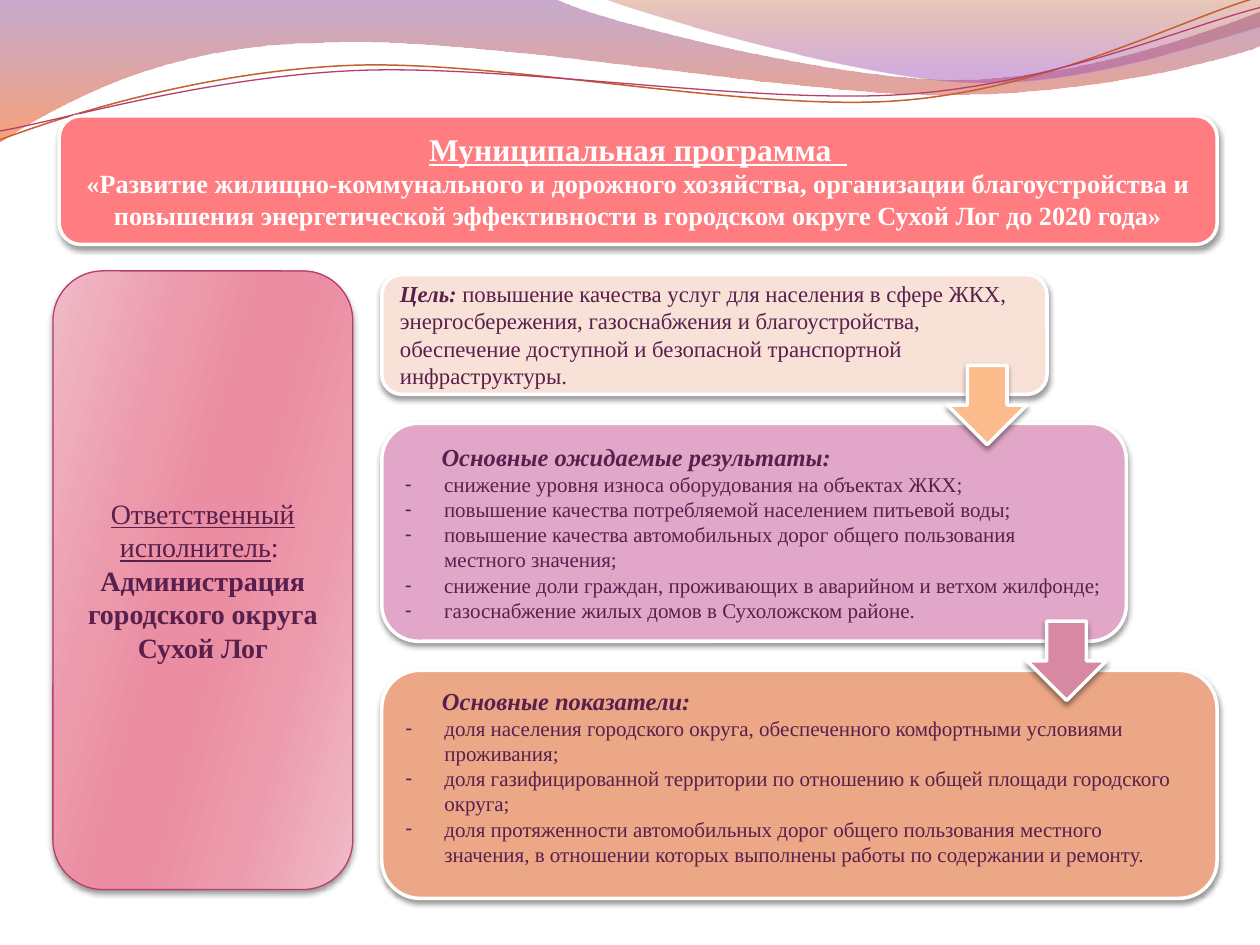
"""Build the slide on the municipal housing and roads programme."""
from lxml import etree
from pptx import Presentation
from pptx.dml.color import RGBColor
from pptx.enum.shapes import MSO_SHAPE
from pptx.enum.text import MSO_ANCHOR, MSO_AUTO_SIZE, PP_ALIGN
from pptx.oxml import parse_xml
from pptx.oxml.ns import nsdecls, qn
from pptx.util import Inches, Pt

ROUNDED, DOWN_ARROW = MSO_SHAPE.ROUNDED_RECTANGLE, MSO_SHAPE.DOWN_ARROW
LEFT, CENTER = PP_ALIGN.LEFT, PP_ALIGN.CENTER
MIDDLE, NO_AUTOFIT = MSO_ANCHOR.MIDDLE, MSO_AUTO_SIZE.NONE
FONT = "Times New Roman"
TWO_CONTENT_LAYOUT = 3
LIST_INDENT = 0.31
HEADING_INDENT = 0.29

COLORS = {
    "white": "FFFFFF", "text": "591F4D", "header": "FF7C80", "goal": "F8E2D7",
    "results": "E2A7C8", "indicators": "EBA786", "goal arrow": "FCBB8B",
    "results arrow": "D788A3", "crimson": "B83D68", "rust": "C45F30",
}
EXECUTOR_STOPS = [(0, "F0BAC6", 100), (30, "EC99AC", 100), (45, "EB8DA3", 100),
                  (55, "EB8DA3", 100), (73, "EC99AC", 100), (100, "F0BAC6", 100)]

BOXES = {
    "header": (0.47, 0.92, 9.19, 1.02),
    "executor": (0.42, 2.15, 2.38, 4.91),
    "goal": (3.03, 2.18, 5.28, 0.95),
    "results": (3.03, 3.36, 5.91, 1.73),
    "indicators": (3.03, 5.32, 6.63, 1.81),
    "goal arrow": (7.52, 2.9, 0.63, 0.63),
    "results arrow": (8.15, 4.93, 0.63, 0.63),
}

HEADER = [
    [("Муниципальная программа  ", 18, "bu")],
    [("«Развитие жилищно-коммунального и дорожного хозяйства, организации благоустройства и "
      "повышения энергетической эффективности в городском округе Сухой Лог до 2020 года»", 15, "b")],
]
EXECUTOR = [
    [("Ответственный исполнитель", 16, "u"), (": ", 16, "")],
    [("Администрация городского округа Сухой Лог", 16, "b")],
]
GOAL = [[
    ("Цель:", 13, "bi"),
    (" повышение качества услуг для населения в сфере ЖКХ, энергосбережения, газоснабжения и "
     "благоустройства, обеспечение доступной и безопасной транспортной инфраструктуры.", 13, ""),
]]
LISTS = {
    "results": ("Основные ожидаемые результаты:", [
        "снижение уровня износа оборудования на объектах ЖКХ;",
        "повышение качества потребляемой населением питьевой воды;",
        "повышение качества автомобильных дорог общего пользования местного значения;",
        "снижение доли граждан, проживающих в аварийном и ветхом жилфонде;",
        "газоснабжение жилых домов в Сухоложском районе.",
    ]),
    "indicators": ("Основные показатели:", [
        "доля населения городского округа, обеспеченного комфортными условиями проживания;",
        "доля газифицированной территории по отношению к общей площади городского округа;",
        "доля протяженности автомобильных дорог общего пользования местного значения, "
        "в отношении которых выполнены работы по содержании и ремонту.",
    ]),
}

WAVES = [
    ([(0, -0.01), (4.4, -0.01),
      [(4.76, 0.17), (6.64, 0.63), (7.58, 0.63)], [(8.53, 0.63), (9.58, 0.26), (10, 0.09)],
      (10.01, 0.36),
      [(9.83, 0.44), (8.7, 0.76), (7.46, 0.75)], [(6.22, 0.75), (3.82, 0.28), (2.57, 0.34)],
      [(1.29, 0.35), (0.46, 0.83), (-0.01, 1.13)]],
     [(0, "834591", 45), (100, "F35307", 55)]),
    ([(4.79, -0.01),
      [(5.09, 0.11), (6.82, 0.62), (7.69, 0.65)], [(8.56, 0.69), (9.61, 0.32), (10, 0.21)],
      (10, 0)],
     [(0, "B74915", 30), (80, "A14BB4", 45)]),
]
STRANDS = [
    ([(0, 1.11), [(0.48, 0.93), (1.58, 0.57), (2.77, 0.52)],
      [(3.95, 0.47), (5.93, 0.89), (7.13, 0.8)], [(8.33, 0.71), (9.38, 0.15), (9.98, -0.02)]],
     "rust", 0.85),
    ([(0, 1.04), [(0.47, 0.96), (1.64, 0.61), (2.83, 0.56)],
      [(4.03, 0.51), (5.97, 0.83), (7.17, 0.75)], [(8.36, 0.67), (9.41, 0.21), (10, 0.06)]],
     "crimson", 0.75),
]


def rgb(name):
    return RGBColor.from_string(COLORS[name])


def add_curve(slide, position, segments, close):
    start, *rest = segments
    groups = [segment if isinstance(segment, list) else [segment] for segment in rest]
    builder = slide.shapes.build_freeform(Inches(start[0]), Inches(start[1]), scale=1.0)
    builder.add_line_segments([(Inches(x), Inches(y)) for group in groups for x, y in group],
                              close=close)
    shape = builder.convert_to_shape()
    lines = iter(list(shape._element.iter(qn("a:lnTo"))))
    for group in groups:
        members = [next(lines) for _ in group]
        if len(members) == 3:
            curve = etree.Element(qn("a:cubicBezTo"))
            members[0].addprevious(curve)
            for member in members:
                curve.append(member[0])
                member.getparent().remove(member)
    shape.shadow.inherit = False
    slide.shapes._spTree.insert(2 + position, shape._element)
    return shape


def set_gradient(shape, stops, angle):
    stop_xml = "".join(
        f'<a:gs pos="{place * 1000}"><a:srgbClr val="{color}"><a:alpha val="{alpha * 1000}"/>'
        f'</a:srgbClr></a:gs>' for place, color, alpha in stops)
    shape._element.spPr.insert(2, parse_xml(
        f'<a:gradFill {nsdecls("a")} rotWithShape="1"><a:gsLst>{stop_xml}</a:gsLst>'
        f'<a:lin ang="{angle * 60000}" scaled="0"/></a:gradFill>'))


def style_panel(shape, name, line="white", width=2):
    shape.left, shape.top, shape.width, shape.height = map(Inches, BOXES[name])
    if shape.is_placeholder:
        shape._element.spPr.insert(1, parse_xml(
            f'<a:prstGeom {nsdecls("a")} prst="roundRect"><a:avLst/></a:prstGeom>'))
    if name in COLORS:
        shape.fill.solid()
        shape.fill.fore_color.rgb = rgb(name)
    else:
        set_gradient(shape, EXECUTOR_STOPS, 16)
    shape.line.color.rgb = rgb(line)
    shape.line.width = Pt(width)
    shape.shadow.inherit = False
    shape._element.spPr.find(qn("a:effectLst")).append(parse_xml(
        f'<a:outerShdw {nsdecls("a")} blurRad="38100" dist="25400" dir="5400000" rotWithShape="0">'
        '<a:srgbClr val="000000"><a:alpha val="40000"/></a:srgbClr></a:outerShdw>'))


def write(shape, paragraphs, color="text", align=CENTER):
    frame = shape.text_frame
    frame.word_wrap, frame.auto_size, frame.vertical_anchor = True, NO_AUTOFIT, MIDDLE
    for index, runs in enumerate(paragraphs):
        paragraph = frame.add_paragraph() if index else frame.paragraphs[0]
        paragraph.alignment = align
        paragraph.space_before = Pt(0)
        for text, size, style in runs:
            run = paragraph.add_run()
            run.text = text
            font = run.font
            font.name, font.size, font.color.rgb = FONT, Pt(size), rgb(color)
            font.bold, font.italic, font.underline = ("b" in style, "i" in style, "u" in style)


def write_list(shape, heading, items):
    write(shape, [[(heading, 14, "bi")]] + [[(item, 12, "")] for item in items], align=LEFT)
    for index, paragraph in enumerate(shape.text_frame.paragraphs):
        properties = paragraph._p.get_or_add_pPr()
        properties.set("marL", str(Inches(LIST_INDENT if index else HEADING_INDENT)))
        properties.set("indent", str(-Inches(LIST_INDENT) if index else 0))
        if index:
            etree.SubElement(properties, qn("a:buChar")).set("char", "-")
        else:
            etree.SubElement(properties, qn("a:buNone"))


def main():
    presentation = Presentation()
    presentation.slide_width, presentation.slide_height = Inches(10), Inches(7.5)
    slide = presentation.slides.add_slide(presentation.slide_layouts[TWO_CONTENT_LAYOUT])
    title, *bodies = slide.placeholders
    title._element.getparent().remove(title._element)

    for position, (segments, stops) in enumerate(WAVES):
        wave = add_curve(slide, position, segments, close=True)
        set_gradient(wave, stops, 90)
        wave.line.fill.background()
    for position, (segments, color, width) in enumerate(STRANDS, len(WAVES)):
        strand = add_curve(slide, position, segments, close=False)
        strand.fill.background()
        strand.line.color.rgb = rgb(color)
        strand.line.width = Pt(width)

    for body, (name, (heading, items)) in zip(bodies, LISTS.items()):
        style_panel(body, name)
        write_list(body, heading, items)
    bodies[1].text_frame.margin_bottom = Inches(0.18)

    panels = [("header", HEADER, "white", CENTER, "white", 2),
              ("executor", EXECUTOR, "text", CENTER, "crimson", 0.75),
              ("goal", GOAL, "text", LEFT, "white", 2)]
    for name, paragraphs, color, align, line, width in panels:
        panel = slide.shapes.add_shape(ROUNDED, 0, 0, 0, 0)
        style_panel(panel, name, line, width)
        write(panel, paragraphs, color, align)
    for name in ("goal arrow", "results arrow"):
        style_panel(slide.shapes.add_shape(DOWN_ARROW, 0, 0, 0, 0), name)
    presentation.save("out.pptx")


if __name__ == "__main__":
    main()
